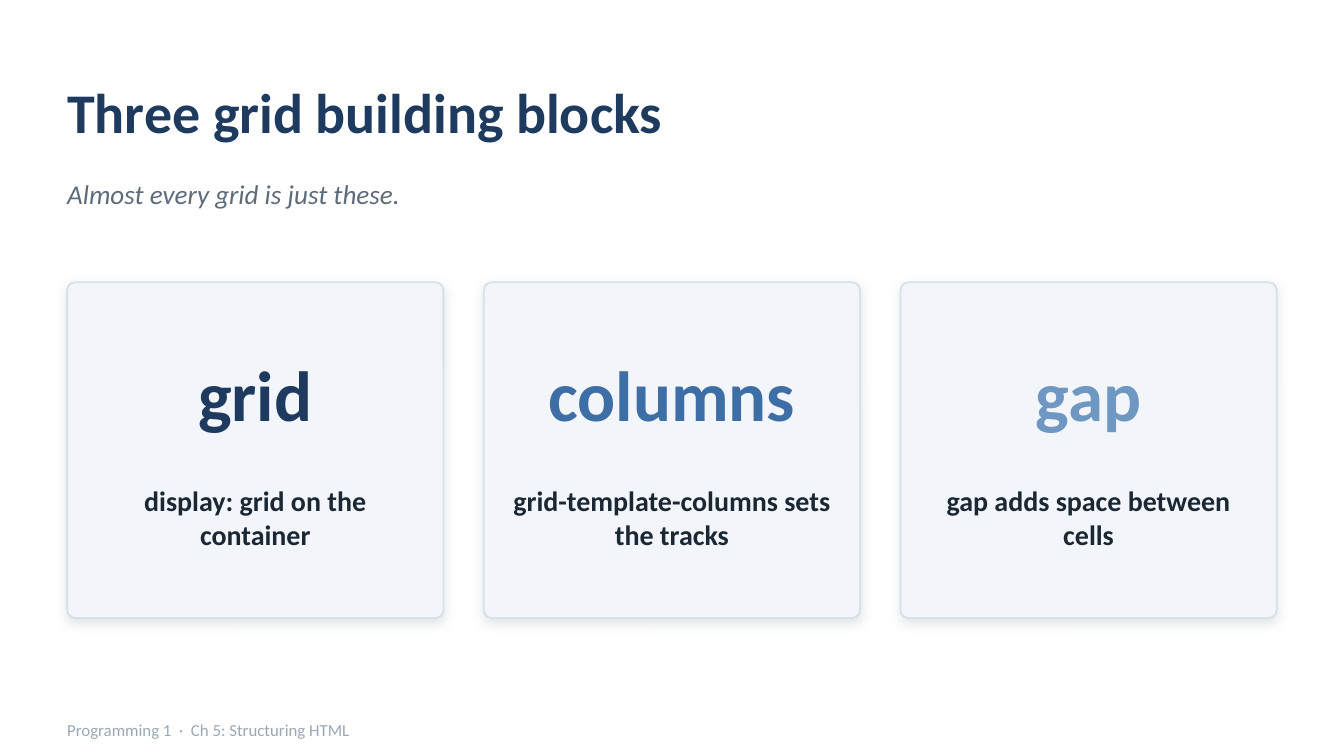
from dataclasses import dataclass

from lxml import etree
from pptx import Presentation
from pptx import util as u
from pptx.dml.color import RGBColor
from pptx.enum import shapes, text
from pptx.oxml import ns

PX = u.Inches(1) // 200
PAGE_WIDTH, PAGE_HEIGHT = 2000, 1125


@dataclass(frozen=True)
class Theme:
    font: str = "Calibri"
    background: str = "FFFFFF"
    navy: str = "1F3A5F"
    blue: str = "3D6EA5"
    light_blue: str = "6E97C2"
    ink: str = "1B2733"
    muted: str = "5E6B79"
    faint: str = "9AA8B6"
    card_fill: str = "F2F5F9"
    card_line: str = "D8E0E9"
    title_size: float = 30
    subtitle_size: float = 14.5
    keyword_size: float = 38
    body_size: float = 15
    footer_size: float = 9


class SlideBuilder:
    def __init__(self, page, theme):
        self.page = page
        self.theme = theme
        fill = page.background.fill
        fill.solid()
        fill.fore_color.rgb = RGBColor.from_string(theme.background)

    def set_text(self, box, words, size, color, bold=False, italic=False,
                 align=text.PP_ALIGN.LEFT, anchor=text.MSO_ANCHOR.MIDDLE):
        frame = box.text_frame
        frame.text = words
        frame.word_wrap = True
        frame.auto_size = text.MSO_AUTO_SIZE.NONE
        frame.vertical_anchor = anchor
        frame.margin_left = frame.margin_right = 0
        frame.margin_top = frame.margin_bottom = 0
        para = frame.paragraphs[0]
        para.alignment = align
        para.line_spacing = 1.0
        para.space_before = u.Pt(0)
        font = para.runs[0].font
        font.name = self.theme.font
        font.size = u.Pt(size)
        font.bold = bold
        font.italic = italic
        font.color.rgb = RGBColor.from_string(color)

    def title(self, left, top, width, height, words):
        box = self.page.shapes.title
        box.left, box.top = left * PX, top * PX
        box.width, box.height = width * PX, height * PX
        self.set_text(box, words, self.theme.title_size, self.theme.navy, bold=True)

    def label(self, left, top, width, height, words, size, color, **style):
        box = self.page.shapes.add_textbox(
            left * PX, top * PX, width * PX, height * PX)
        self.set_text(box, words, size, color, **style)

    def panel(self, left, top, width, height):
        panel = self.page.shapes.add_shape(
            shapes.MSO_SHAPE.ROUNDED_RECTANGLE,
            left * PX, top * PX, width * PX, height * PX)
        panel.adjustments[0] = 0.024
        panel.fill.solid()
        panel.fill.fore_color.rgb = RGBColor.from_string(self.theme.card_fill)
        panel.line.color.rgb = RGBColor.from_string(self.theme.card_line)
        panel.line.width = u.Pt(1)
        self.soft_shadow(panel)

    def soft_shadow(self, shape):
        """Add a faint shadow falling straight down."""
        shape.shadow.inherit = False
        effects = shape.element.spPr.find(ns.qn("a:effectLst"))
        shadow = etree.SubElement(
            effects, ns.qn("a:outerShdw"), blurRad=str(u.Pt(6)),
            dist=str(u.Pt(2)), dir="5400000", algn="bl", rotWithShape="0")
        color = etree.SubElement(shadow, ns.qn("a:srgbClr"), val=self.theme.faint)
        etree.SubElement(color, ns.qn("a:alpha"), val="28000")

    def card(self, left, top, width, height, keyword, color, description):
        theme = self.theme
        self.panel(left, top, width, height)
        self.label(left + 20, top + 70, width - 40, 190, keyword,
                   theme.keyword_size, color, bold=True,
                   align=text.PP_ALIGN.CENTER)
        self.label(left + 30, top + 300, width - 60, 160, description,
                   theme.body_size, theme.ink, bold=True,
                   align=text.PP_ALIGN.CENTER, anchor=text.MSO_ANCHOR.TOP)


def main():
    theme = Theme()
    deck = Presentation()
    deck.slide_width, deck.slide_height = PAGE_WIDTH * PX, PAGE_HEIGHT * PX
    title_only = deck.slide_layouts[5]
    builder = SlideBuilder(deck.slides.add_slide(title_only), theme)

    margin, gap = 100, 60
    content_width = PAGE_WIDTH - 2 * margin
    builder.title(margin, 80, content_width, 170, "Three grid building blocks")
    builder.label(margin, 248, content_width, 80,
                  "Almost every grid is just these.",
                  theme.subtitle_size, theme.muted, italic=True)

    cards = [
        ("grid", theme.navy, "display: grid on the container"),
        ("columns", theme.blue, "grid-template-columns sets the tracks"),
        ("gap", theme.light_blue, "gap adds space between cells"),
    ]
    card_width = (content_width - gap * (len(cards) - 1)) // len(cards)
    for index, card in enumerate(cards):
        left = margin + index * (card_width + gap)
        builder.card(left, 420, card_width, 500, *card)

    builder.label(margin, 1060, 1600, 52,
                  "Programming 1  ·  Ch 5: Structuring HTML",
                  theme.footer_size, theme.faint)
    deck.save("out.pptx")


if __name__ == "__main__":
    main()
